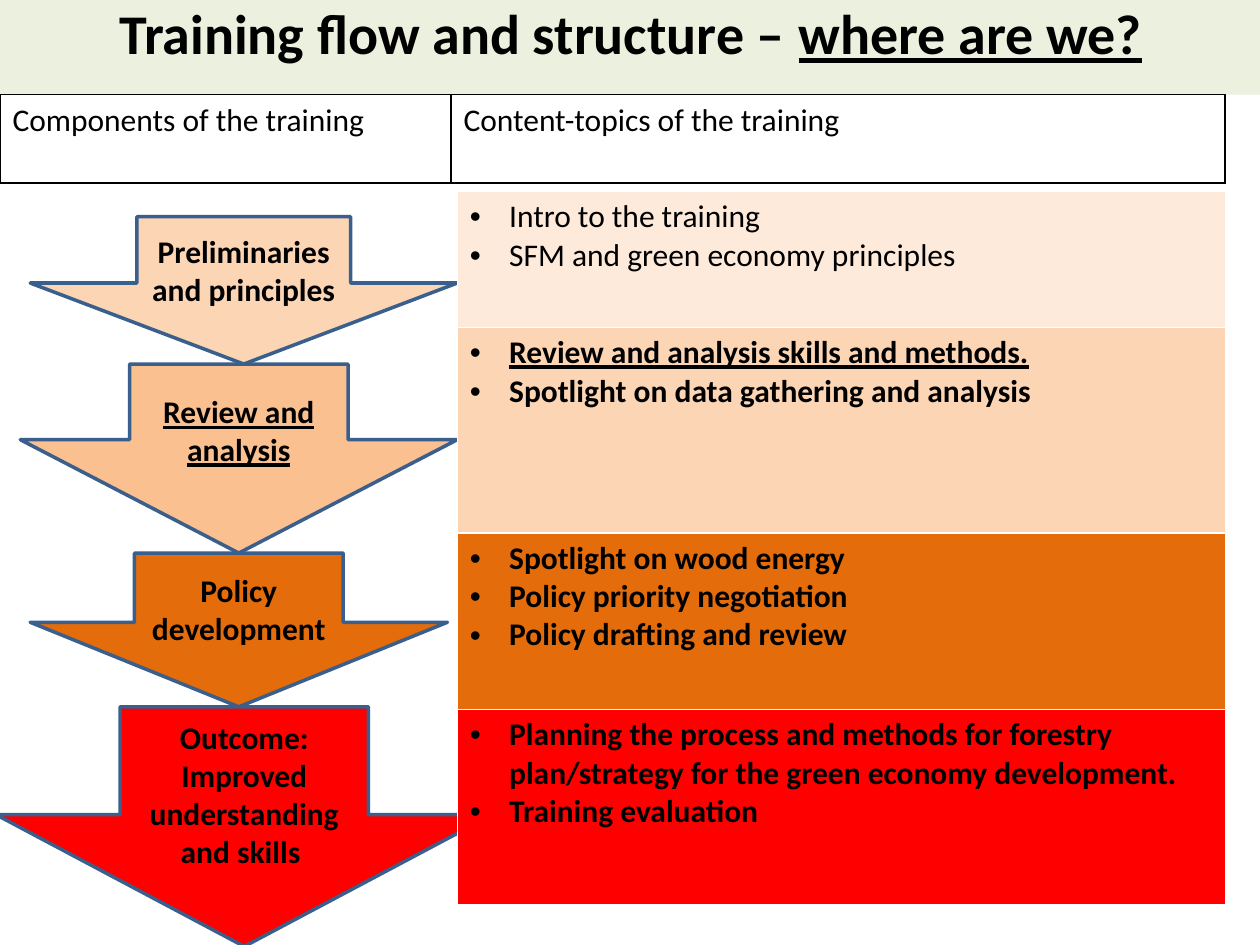
import pptx
import pptx.util
import pptx.oxml
import pptx.dml.color
import pptx.enum.shapes
import pptx.enum.text
import pptx.oxml.ns

Cm = pptx.util.Cm
Pt = pptx.util.Pt
ALIGN = pptx.enum.text.PP_ALIGN
ANCHOR = pptx.enum.text.MSO_ANCHOR
PLAIN = {"name": "Calibri", "size": Pt(18), "bold": False, "underline": False}
BOLD = {**PLAIN, "bold": True}
LINED = {**BOLD, "underline": True}
BIG = {**BOLD, "size": Pt(32)}

STEPS = [
    ("Preliminaries and principles", BOLD, "FCD5B5", 0.61, 8.61, 2.97, 0.55),
    ("Review and analysis", LINED, "FAC090", 0.41, 8.81, 3.81, 0.6),
    ("Policy development", BOLD, "E46C0A", 0.61, 8.41, 3.1, 0.55),
    ("Outcome: Improved understanding and skills ", BOLD, "FF0000", -0.08, 10.01, 4.83, 0.55),
]
TOPICS = [
    ("FDEADA", 2.74, [("Intro to the training", PLAIN),
                      ("SFM and green economy principles", PLAIN)]),
    ("FCD5B5", 4.14, [("Review and analysis skills and methods.", LINED),
                      ("Spotlight on data gathering and analysis", BOLD)]),
    ("E46C0A", 3.56, [("Spotlight on wood energy", BOLD),
                      ("Policy priority negotiation", BOLD),
                      ("Policy drafting and review", BOLD)]),
    ("FF0000", 3.94, [("Planning the process and methods for forestry "
                       "plan/strategy for the green economy development.", BOLD),
                      ("Training evaluation", BOLD)]),
]
HEADS = [("Components of the training", 9.09), ("Content-topics of the training", 15.6)]


def assign(item, style):
    """Set each attribute named in a dict of format values."""
    for name, value in style.items():
        setattr(item, name, value)


def paint(fill, tone):
    """Give a fill one solid colour from a hex string."""
    fill.solid()
    fill.fore_color.rgb = pptx.dml.color.RGBColor.from_string(tone)


def write(para, text, style):
    """Add a black run with the given format."""
    run = para.add_run()
    run.text = text
    assign(run.font, style)
    paint(run.font.fill, "000000")


def bullet(para):
    """Give a paragraph a round bullet and a hanging indent."""
    props = para._p.get_or_add_pPr()
    props.set("marL", str(Cm(0.79)))
    props.set("indent", str(-Cm(0.79)))
    space = pptx.oxml.ns.nsdecls("a")
    for part in ('buFont %s typeface="Arial"', 'buChar %s char="•"'):
        props.append(pptx.oxml.parse_xml("<a:" + part % space + "/>"))


def frame(cell, tone):
    """Draw a one-point border on all sides of a cell."""
    props = cell._tc.get_or_add_tcPr()
    for spot, side in enumerate("LRTB"):
        props.insert(spot, pptx.oxml.parse_xml(
            f'<a:ln{side} {pptx.oxml.ns.nsdecls("a")} w="{Pt(1)}"><a:solidFill>'
            f'<a:srgbClr val="{tone}"/></a:solidFill></a:ln{side}>'))


def grid(slide, left, top, widths, heights):
    """Add a plain table with the given column widths and row heights."""
    table = slide.shapes.add_table(len(heights), len(widths), Cm(left), Cm(top),
                                   Cm(sum(widths)), Cm(sum(heights))).table
    assign(table, {"first_row": False, "horz_banding": False})
    for col, width in zip(table.columns, widths):
        col.width = Cm(width)
    for row, height in zip(table.rows, heights):
        row.height = Cm(height)
    return table


def banner(slide, left, top, width, height):
    """Place the title on its pale green band."""
    title = slide.shapes.title
    assign(title, {"left": Cm(left), "top": Cm(top),
                   "width": Cm(width), "height": Cm(height)})
    paint(title.fill, "EBF1DE")
    assign(title.text_frame, {"vertical_anchor": ANCHOR.TOP, "word_wrap": True,
                              "auto_size": pptx.enum.text.MSO_AUTO_SIZE.NONE})
    para = title.text_frame.paragraphs[0]
    para.alignment = ALIGN.CENTER
    write(para, "Training flow and structure – ", BIG)
    write(para, "where are we?", {**BIG, "underline": True})


def arrows(slide, left, top):
    """Stack the step arrows tip to tail."""
    for text, style, tone, shift, width, height, head in STEPS:
        arrow = slide.shapes.add_shape(
            pptx.enum.shapes.MSO_SHAPE.DOWN_ARROW,
            Cm(left + shift), Cm(top), Cm(width), Cm(height))
        arrow.adjustments[1] = head
        arrow.shadow.inherit = False
        paint(arrow.fill, tone)
        paint(arrow.line.fill, "3A5F8C")
        arrow.line.width = Pt(2)
        assign(arrow.text_frame, {"word_wrap": True, "vertical_anchor": ANCHOR.MIDDLE})
        para = arrow.text_frame.paragraphs[0]
        para.alignment = ALIGN.CENTER
        write(para, text, style)
        top += height


def topics(slide, left, top, width):
    """Add the coloured table of bulleted topics."""
    table = grid(slide, left, top, [width], [height for _, height, _ in TOPICS])
    for row, (tone, _, lines) in enumerate(TOPICS):
        cell = table.cell(row, 0)
        paint(cell.fill, tone)
        frame(cell, "FFFFFF")
        for spot, (text, style) in enumerate(lines):
            text_box = cell.text_frame
            para = text_box.add_paragraph() if spot else text_box.paragraphs[0]
            bullet(para)
            write(para, text, style)


def header(slide, left, top, height):
    """Add the outlined row of column headings."""
    table = grid(slide, left, top, [width for _, width in HEADS], [height])
    for col, (text, _) in enumerate(HEADS):
        cell = table.cell(0, col)
        paint(cell.fill, "FFFFFF")
        frame(cell, "000000")
        write(cell.text_frame.paragraphs[0], text, PLAIN)


def main():
    """Build the slide and save it."""
    deck = pptx.Presentation()
    assign(deck, {"slide_width": Cm(25.4), "slide_height": Cm(19.05)})
    slide = deck.slides.add_slide(deck.slide_layouts.get_by_name("Title Only"))
    banner(slide, 0, -0.15, 25.43, 2.06)
    arrows(slide, 0, 4.37)
    topics(slide, 9.22, 3.86, 15.49)
    header(slide, 0, 1.91, 1.78)
    deck.save("out.pptx")


if __name__ == "__main__":
    main()
